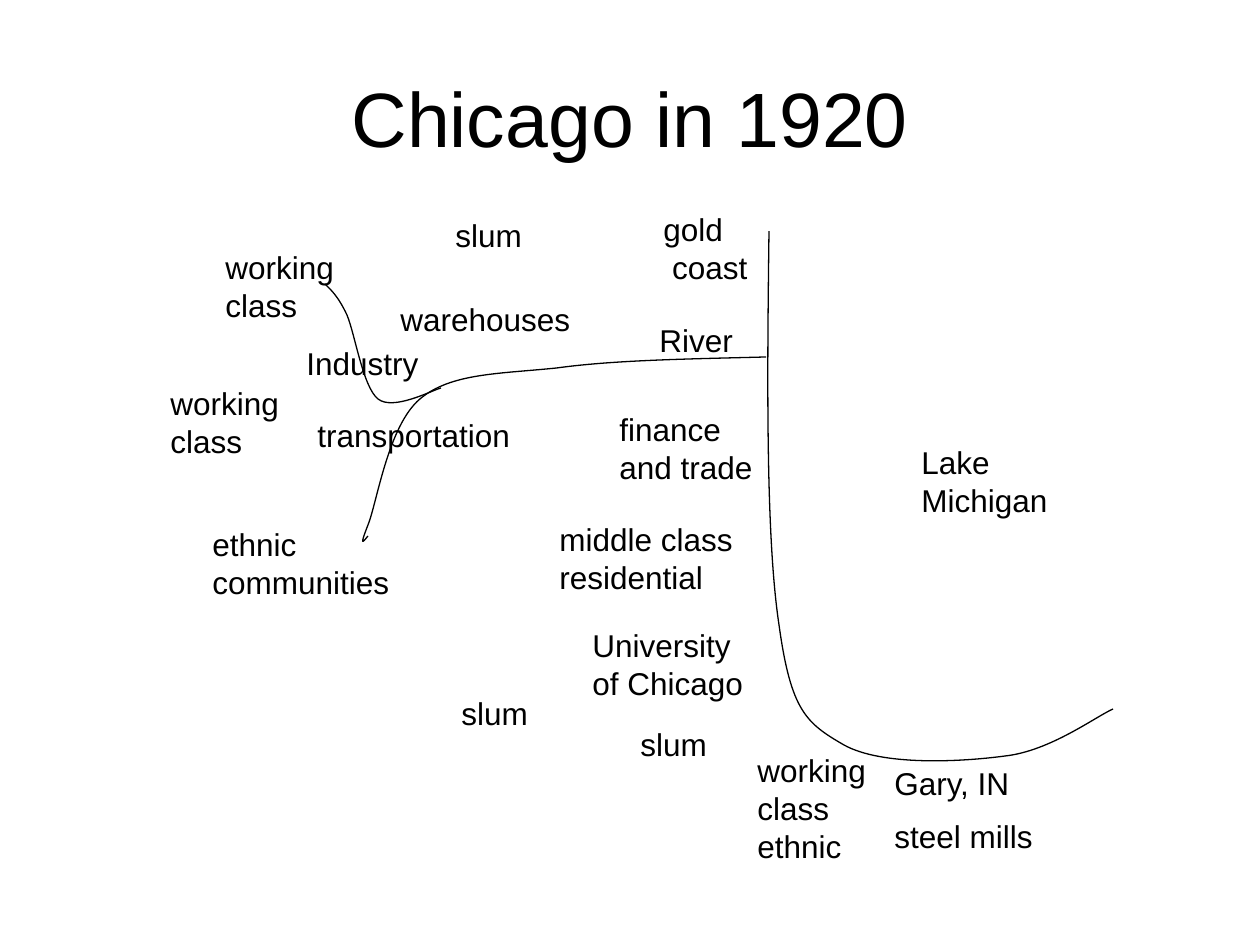
from lxml import etree
from pptx import Presentation
from pptx.dml.color import RGBColor
from pptx.enum.text import MSO_ANCHOR, MSO_AUTO_SIZE, PP_ALIGN
from pptx.oxml.ns import qn
from pptx.util import Pt

PX = 914400 / 126
INK = "000000"
FONT = "Arial"
MIDDLE = MSO_ANCHOR.MIDDLE
CENTER = PP_ALIGN.CENTER
LEFT = PP_ALIGN.LEFT
GROW = MSO_AUTO_SIZE.SHAPE_TO_FIT_TEXT

LABELS = [
    ("Lake\nMichigan", 909, 437, 152),
    ("River", 647, 315, 100),
    ("Industry", 294, 338, 138),
    ("transportation", 305, 410, 218),
    ("working\nclass", 158, 378, 134),
    ("ethnic\ncommunities", 200, 519, 202),
    ("finance\nand trade", 607, 404, 159),
    ("middle class\nresidential", 547, 514, 200),
    ("gold\n coast", 651, 204, 110),
    ("working\nclass", 213, 242, 134),
    ("slum", 443, 210, 93),
    ("Gary, IN", 882, 758, 142),
    ("University\nof Chicago", 580, 620, 176),
    ("slum", 449, 688, 93),
    ("working\nclass\nethnic", 745, 745, 135),
    ("steel mills", 882, 811, 164),
    ("slum", 628, 719, 93),
    ("warehouses", 388, 294, 196),
]

LAKE_SHORE = [
    (769, 231), (767, 386), (766, 539), (779, 625), (791, 711),
    (806, 723), (844, 745), (882, 766), (960, 762), (1005, 756),
    (1050, 751), (1095, 717), (1113, 709),
]
RIVER = [
    (766, 357), (690, 359), (615, 360), (557, 368), (499, 374),
    (451, 373), (420, 399), (388, 426), (377, 503), (368, 525),
    (359, 548), (363, 542), (368, 536),
]
NORTH_BRANCH = [
    (325, 284), (331, 290), (338, 296), (347, 315), (355, 334),
    (363, 387), (378, 399), (393, 411), (431, 391), (441, 388),
]


def emu(pixels):
    """Turn pixels into EMU."""
    return round(pixels * PX)


def color(value):
    """Turn a hex string into a colour."""
    return RGBColor.from_string(value)


def add_text(page, text, left, top, width, height, size, align=LEFT):
    """Add a text box with one paragraph per line of text."""
    box = page.shapes.add_textbox(emu(left), emu(top), emu(width), emu(height))
    frame = box.text_frame
    frame.text = text
    for para in frame.paragraphs:
        para.alignment = align
        for span in para.runs:
            span.font.name = FONT
            span.font.size = Pt(size)
            span.font.color.rgb = color(INK)
    return frame


def add_title(page, text):
    """Add the centred slide title."""
    frame = add_text(page, text, 63, 38, 1134, 157, 44, CENTER)
    frame.word_wrap = True
    frame.vertical_anchor = MIDDLE


def add_label(page, text, left, top, width):
    """Add a map label whose height follows its line count."""
    height = 12 + 38 * len(text.split("\n"))
    frame = add_text(page, text, left, top, width, height, 18)
    frame.word_wrap = False
    frame.auto_size = GROW


def bend_segments(curve):
    """Group each three line points of a freeform into a cubic Bezier."""
    outline = next(curve.element.iter(qn("a:path")))
    lines = outline.findall(qn("a:lnTo"))
    for start in range(0, len(lines), 3):
        bend = etree.SubElement(outline, qn("a:cubicBezTo"))
        for line in lines[start:start + 3]:
            bend.append(line[0])
            outline.remove(line)


def add_curve(page, controls):
    """Draw an open line through chained cubic Bezier segments."""
    points = [(emu(x), emu(y)) for x, y in controls]
    builder = page.shapes.build_freeform(*points[0])
    builder.add_line_segments(points[1:], close=False)
    curve = builder.convert_to_shape()
    bend_segments(curve)
    curve.shadow.inherit = False
    curve.fill.background()
    curve.line.color.rgb = color(INK)
    curve.line.width = Pt(0.75)


def main():
    """Build the slide and save it."""
    deck = Presentation()
    deck.slide_width = emu(1260)
    deck.slide_height = emu(945)
    page = deck.slides.add_slide(deck.slide_layouts[6])
    add_title(page, "Chicago in 1920")
    for controls in (LAKE_SHORE, RIVER, NORTH_BRANCH):
        add_curve(page, controls)
    for label in LABELS:
        add_label(page, *label)
    deck.save("out.pptx")


if __name__ == "__main__":
    main()
